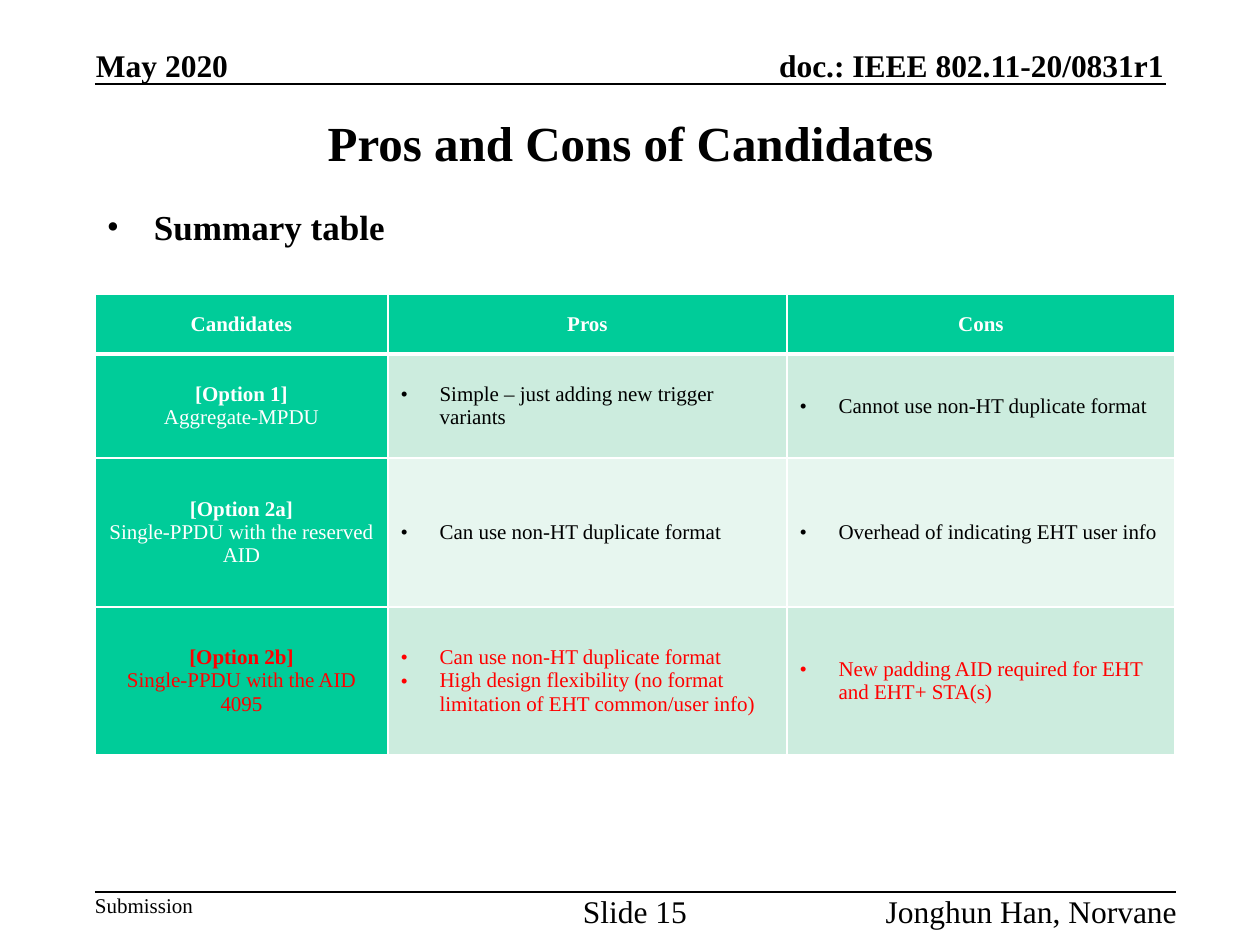
"""Build the slide that sums up the pros and cons of the candidates."""
from lxml import etree
from pptx import Presentation
from pptx.dml.color import RGBColor
from pptx.enum.shapes import MSO_CONNECTOR
from pptx.enum.text import MSO_ANCHOR, PP_ALIGN
from pptx.oxml.ns import qn
from pptx.util import Pt

PX = 914400 // 126
FONT = "Times New Roman"
BLACK = RGBColor(0x00, 0x00, 0x00)
WHITE = RGBColor(0xFF, 0xFF, 0xFF)
RED = RGBColor(0xFF, 0x00, 0x00)
GREEN = RGBColor(0x00, 0xCC, 0x99)
BANDS = (RGBColor(0xCC, 0xEC, 0xDE), RGBColor(0xE7, 0xF6, 0xEF))
LEFT, CENTER, RIGHT = PP_ALIGN.LEFT, PP_ALIGN.CENTER, PP_ALIGN.RIGHT
TOP, MIDDLE, BOTTOM = MSO_ANCHOR.TOP, MSO_ANCHOR.MIDDLE, MSO_ANCHOR.BOTTOM
STRAIGHT = MSO_CONNECTOR.STRAIGHT

MARGIN_TEXTS = [
    ("doc.: IEEE 802.11-20/0831r1", (704, 46, 460, 38), 18, True, RIGHT, BOTTOM),
    ("May 2020", (96, 46, 144, 38), 18, True, LEFT, BOTTOM),
    ("Submission", (95, 893, 110, 25), 12, False, LEFT, TOP),
    ("Slide 15", (565, 892, 140, 38), 18, False, CENTER, TOP),
    ("Jonghun Han, Norvane", (837, 892, 340, 38), 18, False, RIGHT, TOP),
]
RULES = [(95, 1166, 84), (95, 1176, 892)]
TITLE = ("Pros and Cons of Candidates", (95, 95, 1071, 94), 28, True, CENTER, MIDDLE)
BODY = ("Summary table", (94, 200, 1071, 683), 20, True, LEFT, TOP)
BODY_INDENT = 47
CELL_INDENT = 39

HEADERS = ["Candidates", "Pros", "Cons"]
OPTIONS = [
    (["[Option 1]", "Aggregate-MPDU"],
     ["Simple – just adding new trigger variants"],
     ["Cannot use non-HT duplicate format"]),
    (["[Option 2a]", "Single-PPDU with the reserved AID"],
     ["Can use non-HT duplicate format"],
     ["Overhead of indicating EHT user info"]),
    (["[Option 2b]", "Single-PPDU with the AID 4095"],
     ["Can use non-HT duplicate format",
      "High design flexibility (no format limitation of EHT common/user info)"],
     ["New padding AID required for EHT and EHT+ STA(s)"]),
]
HIGHLIGHTED = "[Option 2b]"
TABLE_LEFT, TABLE_TOP = 95, 294
COLUMN_WIDTHS = [293, 399, 388]
ROW_HEIGHTS = [60, 104, 149, 148]


def scaled(box):
    return [value * PX for value in box]


def style(paragraph, size, bold, color):
    for run in paragraph.runs:
        run.font.name = FONT
        run.font.size = Pt(size)
        run.font.bold = bold
        run.font.color.rgb = color


def add_bullet(paragraph, indent):
    properties = paragraph._p.get_or_add_pPr()
    properties.set("marL", str(indent * PX))
    properties.set("indent", str(-indent * PX))
    etree.SubElement(properties, qn("a:buFont"), typeface=FONT)
    etree.SubElement(properties, qn("a:buChar"), char="•")


def add_text(slide, text, box, size, bold, alignment, anchor, inset=(0, 0)):
    frame = slide.shapes.add_textbox(*scaled(box)).text_frame
    frame.margin_left = frame.margin_right = inset[0] * PX
    frame.margin_top = frame.margin_bottom = inset[1] * PX
    frame.word_wrap = True
    frame.vertical_anchor = anchor
    frame.text = text
    paragraph = frame.paragraphs[0]
    paragraph.alignment = alignment
    style(paragraph, size, bold, BLACK)
    return paragraph


def add_rule(slide, start, end, y):
    rule = slide.shapes.add_connector(STRAIGHT, *scaled((start, y, end, y)))
    rule.line.color.rgb = BLACK
    rule.line.width = Pt(1)
    etree.SubElement(rule._element.spPr, qn("a:effectLst"))


def set_borders(cell, row):
    widths = {"L": 1, "R": 1, "T": 3 if row == 1 else 1, "B": 3 if row == 0 else 1}
    properties = cell._tc.get_or_add_tcPr()
    for position, (side, width) in enumerate(widths.items()):
        line = etree.Element(qn(f"a:ln{side}"), w=str(Pt(width)))
        fill = etree.SubElement(line, qn("a:solidFill"))
        etree.SubElement(fill, qn("a:srgbClr"), val=str(WHITE))
        properties.insert(position, line)


def fill_cell(cell, lines, row, column):
    heading = row == 0 or column == 0
    highlighted = row > 0 and OPTIONS[row - 1][0][0] == HIGHLIGHTED
    color = RED if highlighted else WHITE if heading else BLACK
    cell.fill.solid()
    cell.fill.fore_color.rgb = GREEN if heading else BANDS[(row - 1) % 2]
    set_borders(cell, row)
    cell.vertical_anchor = MIDDLE
    cell.text_frame.text = "\n".join(lines)
    for index, paragraph in enumerate(cell.text_frame.paragraphs):
        if heading:
            paragraph.alignment = CENTER
        else:
            add_bullet(paragraph, CELL_INDENT)
        style(paragraph, 12, heading and index == 0, color)


def add_summary_table(slide):
    rows = [[[header] for header in HEADERS], *OPTIONS]
    box = (TABLE_LEFT, TABLE_TOP, sum(COLUMN_WIDTHS), sum(ROW_HEIGHTS))
    table = slide.shapes.add_table(len(rows), len(HEADERS), *scaled(box)).table
    for column, width in zip(table.columns, COLUMN_WIDTHS):
        column.width = width * PX
    for row, height in zip(table.rows, ROW_HEIGHTS):
        row.height = height * PX
    for row, cells in enumerate(rows):
        for column, lines in enumerate(cells):
            fill_cell(table.cell(row, column), lines, row, column)


def main():
    presentation = Presentation()
    presentation.slide_width, presentation.slide_height = scaled((1260, 945))
    slide = presentation.slides.add_slide(presentation.slide_layouts[6])
    for rule in RULES:
        add_rule(slide, *rule)
    for entry in MARGIN_TEXTS:
        add_text(slide, *entry)
    add_text(slide, *TITLE, inset=(13, 6))
    add_bullet(add_text(slide, *BODY, inset=(13, 6)), BODY_INDENT)
    add_summary_table(slide)
    presentation.save("out.pptx")


if __name__ == "__main__":
    main()
